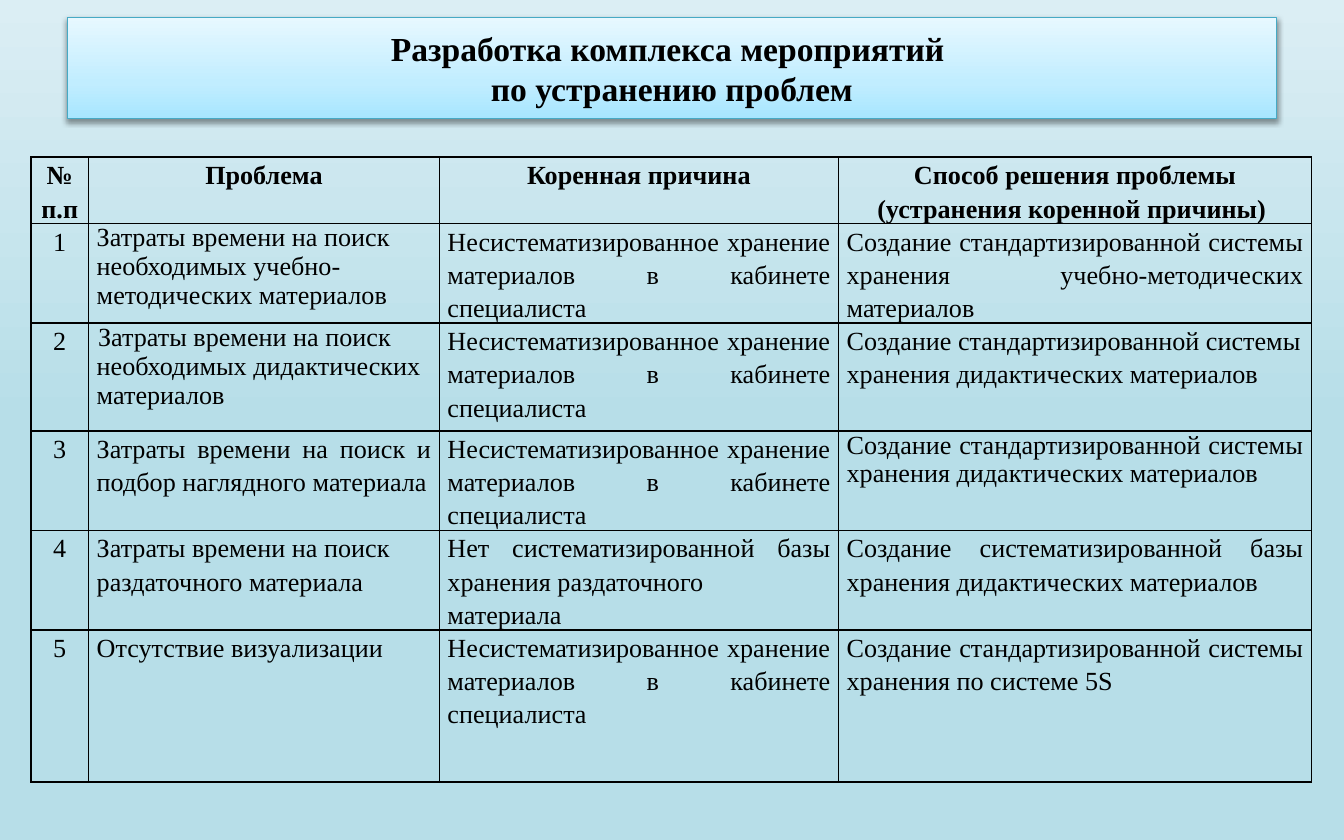
from lxml import etree
from pptx import Presentation
from pptx.dml.color import RGBColor
from pptx.enum.text import MSO_ANCHOR, PP_ALIGN
from pptx.oxml import parse_xml
from pptx.oxml.ns import nsdecls, qn
from pptx.util import Inches, Pt

LEFT, CENTER, JUSTIFY = PP_ALIGN.LEFT, PP_ALIGN.CENTER, PP_ALIGN.JUSTIFY
FONT = "Times New Roman"
COLORS = {"text": "000000", "border": "000000", "title_line": "46AAC5", "shadow": "000000"}
BACKGROUND_STOPS = [(0, "DBEEF4"), (50, "B7DEE8"), (100, "B7DEE8")]
TITLE_STOPS = [(0, "A7E6FF"), (35, "C1EDFF"), (100, "E7F8FF")]

TITLE = "Разработка комплекса мероприятий \nпо устранению проблем"
UNSORTED = "Несистематизированное хранение материалов в кабинете специалиста"
STANDARD = "Создание стандартизированной системы хранения"
# A line break inside a cell starts a new paragraph.
ROWS = [
    ("№\nп.п", "Проблема", "Коренная причина",
     "Способ решения проблемы (устранения коренной причины) "),
    ("1", "Затраты времени на поиск необходимых учебно-методических материалов",
     UNSORTED, f"{STANDARD} учебно-методических материалов"),
    ("2", "Затраты времени на поиск необходимых дидактических материалов",
     UNSORTED, f"{STANDARD} дидактических материалов"),
    ("3", "Затраты времени на поиск и подбор наглядного материала",
     UNSORTED, f"{STANDARD} дидактических материалов"),
    ("4", "Затраты времени на поиск\nраздаточного материала",
     "Нет систематизированной базы хранения раздаточного\nматериала",
     "Создание систематизированной базы хранения дидактических материалов"),
    ("5", "Отсутствие визуализации", UNSORTED, f"{STANDARD} по системе 5S"),
]
COLUMN_WIDTHS = [0.43, 2.61, 2.97, 3.52]
ROW_HEIGHTS = [0.47, 0.72, 0.8, 0.72, 0.72, 1.13]
# (row, column): (alignment, line spacing, space before, first-line indent)
SPECIAL_CELLS = {
    (1, 1): (LEFT, 1.0, 0, 0),
    (2, 1): (LEFT, 1.0, 0, 0.01),
    (2, 3): (LEFT, 1.15, 0, 0),
    (3, 3): (JUSTIFY, 1.0, 3.6, 0),
}


def paint_gradient(fill, properties, stops, angle):
    fill.solid()
    stop_xml = "".join(
        f'<a:gs pos="{position * 1000}"><a:srgbClr val="{color}"/></a:gs>'
        for position, color in stops)
    gradient = parse_xml(
        f'<a:gradFill {nsdecls("a")} rotWithShape="1"><a:gsLst>{stop_xml}</a:gsLst>'
        f'<a:lin ang="{angle * 60000}" scaled="0"/></a:gradFill>')
    properties.replace(properties.find(qn("a:solidFill")), gradient)


def format_font(font, size, bold):
    font.name, font.size, font.bold = FONT, Pt(size), bold
    font.color.rgb = RGBColor.from_string(COLORS["text"])


def add_title(slide):
    title = slide.shapes.title
    title.left, title.top = Inches(0.5), Inches(0.13)
    title.width, title.height = Inches(9), Inches(0.75)
    properties = title.element.spPr
    paint_gradient(title.fill, properties, TITLE_STOPS, 270)
    title.line.color.rgb = RGBColor.from_string(COLORS["title_line"])
    title.line.width = Pt(0.75)
    effects = etree.SubElement(properties, qn("a:effectLst"))
    effects.append(parse_xml(
        f'<a:outerShdw {nsdecls("a")} blurRad="{Pt(3.1)}" dist="{Pt(1.6)}" dir="5400000" '
        f'rotWithShape="0"><a:srgbClr val="{COLORS["shadow"]}"><a:alpha val="38000"/>'
        '</a:srgbClr></a:outerShdw>'))
    frame = title.text_frame
    frame.word_wrap, frame.vertical_anchor = True, MSO_ANCHOR.MIDDLE
    paragraph = frame.paragraphs[0]
    paragraph.text = TITLE
    paragraph.alignment = CENTER
    format_font(paragraph.font, 18, True)


def add_borders(cell):
    properties = cell._tc.get_or_add_tcPr()
    for index, side in enumerate(("lnL", "lnR", "lnT", "lnB")):
        properties.insert(index, parse_xml(
            f'<a:{side} {nsdecls("a")} w="{Pt(1)}"><a:solidFill>'
            f'<a:srgbClr val="{COLORS["border"]}"/></a:solidFill></a:{side}>'))


def fill_cell(cell, text, row, column):
    cell.fill.background()
    add_borders(cell)
    cell.margin_left = cell.margin_right = Inches(0.06 if column else 0.05)
    cell.margin_top = cell.margin_bottom = 0
    default = (CENTER if row == 0 or column == 0 else JUSTIFY, 1.15, 0, 0)
    alignment, spacing, before, indent = SPECIAL_CELLS.get((row, column), default)
    cell.text_frame.text = text
    for paragraph in cell.text_frame.paragraphs:
        paragraph.alignment = alignment
        paragraph.line_spacing = spacing
        paragraph.space_before = Pt(before)
        if indent:
            paragraph._p.get_or_add_pPr().set("indent", str(Inches(indent)))
        format_font(paragraph.font, 14, row == 0)


def add_problem_table(slide):
    table = slide.shapes.add_table(
        len(ROWS), len(COLUMN_WIDTHS), Inches(0.23), Inches(1.17),
        Inches(sum(COLUMN_WIDTHS)), Inches(sum(ROW_HEIGHTS))).table
    table.first_row = table.horz_banding = False
    for column, width in zip(table.columns, COLUMN_WIDTHS):
        column.width = Inches(width)
    for row, height in zip(table.rows, ROW_HEIGHTS):
        row.height = Inches(height)
    for row, texts in enumerate(ROWS):
        for column, text in enumerate(texts):
            fill_cell(table.cell(row, column), text, row, column)


def main():
    presentation = Presentation()
    presentation.slide_width, presentation.slide_height = Inches(10), Inches(6.25)
    slide = presentation.slides.add_slide(presentation.slide_layouts.get_by_name("Title Only"))
    background_fill = slide.background.fill
    background_fill.solid()
    background = slide.element.find(".//" + qn("p:bgPr"))
    paint_gradient(background_fill, background, BACKGROUND_STOPS, 90)
    add_title(slide)
    add_problem_table(slide)
    presentation.save("out.pptx")


if __name__ == "__main__":
    main()
